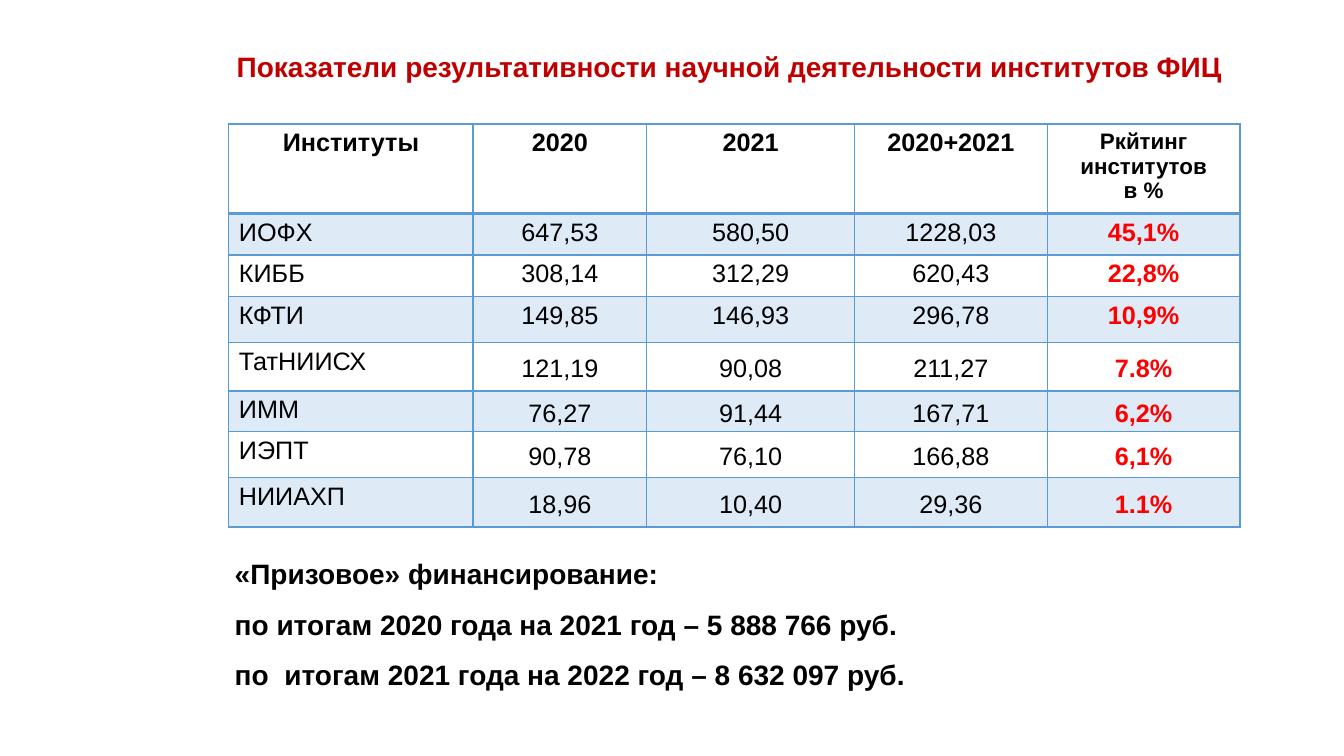
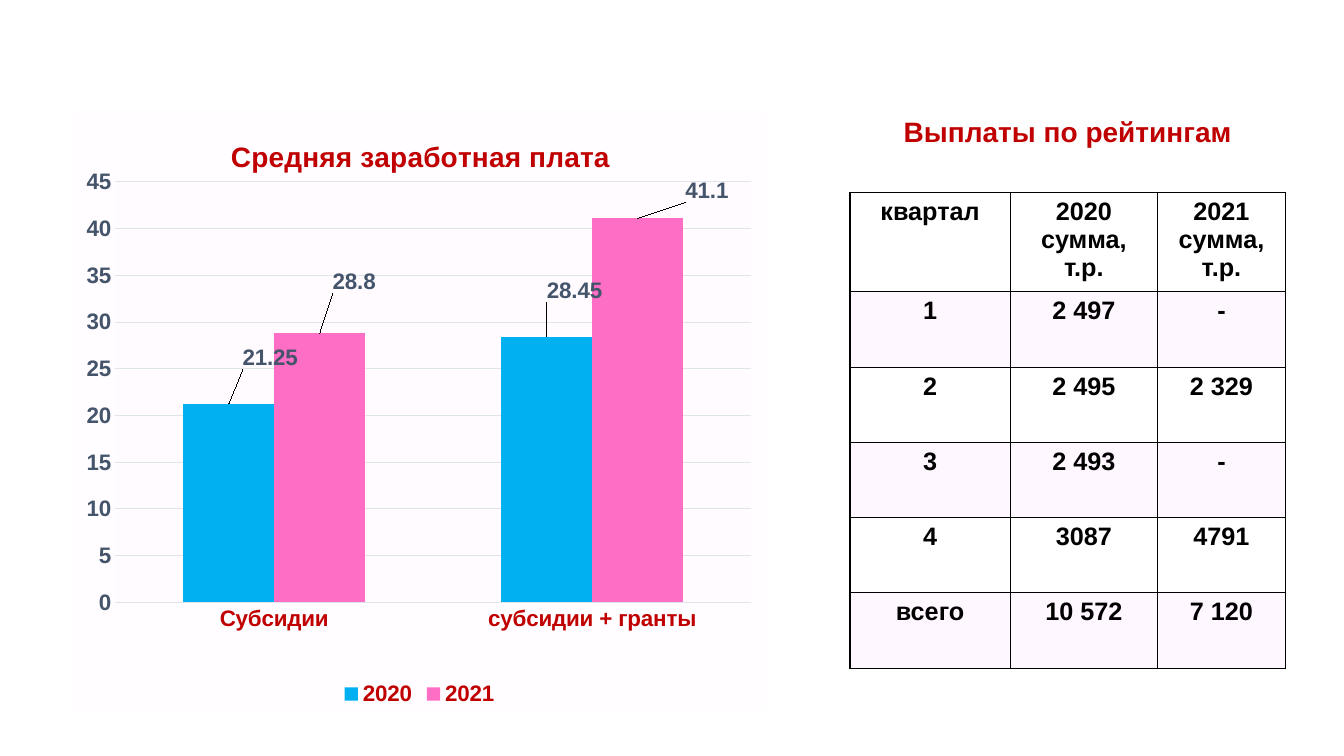
from lxml.etree import SubElement
from pptx import Presentation
from pptx.chart.data import CategoryChartData
from pptx.dml.color import RGBColor
from pptx.enum.chart import XL_CHART_TYPE, XL_LEGEND_POSITION, XL_TICK_MARK
from pptx.enum.text import MSO_ANCHOR, MSO_AUTO_SIZE, PP_ALIGN
from pptx.oxml import parse_xml
from pptx.oxml.ns import nsdecls, qn
from pptx.util import Inches, Pt

COLORS = {
    "title": "C00000",
    "text": "000000",
    "white": "FFFFFF",
    "rating": "FF0000",
    "grid_blue": "5B9BD5",
    "band_blue": "DEEBF7",
    "band_pink": "FFF7FF",
    "chart_back": "FFFDFF",
    "plot_back": "FFFBFF",
    "axis_text": "44546A",
    "axis_line": "E0E5EB",
    "year_2020": "00B0F0",
    "year_2021": "FE6EC4",
}
FONT = "Arial"
WIDTH, HEIGHT = Inches(13.33), Inches(7.5)


def rgb(name):
    return RGBColor.from_string(COLORS[name])


def box(left, top, width, height):
    return (int(WIDTH * left / 100), int(HEIGHT * top / 100),
            int(WIDTH * width / 100), int(HEIGHT * height / 100))


def style_font(font, size, color="text", bold=True):
    font.name = FONT
    font.size = Pt(size)
    font.bold = bold
    font.color.rgb = rgb(color)


def write(tf, lines, size, color="text", bold=True, align=PP_ALIGN.LEFT, spacing=None):
    for i, line in enumerate(lines):
        p = tf.paragraphs[0] if i == 0 else tf.add_paragraph()
        p.alignment = align
        if spacing:
            p.line_spacing = spacing
        r = p.add_run()
        r.text = line
        style_font(r.font, size, color, bold)


def new_slide(prs, title, area):
    s = prs.slides.add_slide(prs.slide_layouts[5])
    sp = s.shapes.title
    sp.left, sp.top, sp.width, sp.height = area
    tf = sp.text_frame
    tf.word_wrap = True
    tf.auto_size = MSO_AUTO_SIZE.NONE
    tf.vertical_anchor = MSO_ANCHOR.TOP
    write(tf, [title], 20, "title", align=PP_ALIGN.CENTER)
    return s


def set_borders(cell, color, top=1, bottom=1):
    tc_pr = cell._tc.get_or_add_tcPr()
    for i, (side, width) in enumerate(zip("LRTB", (1, 1, top, bottom))):
        ln = parse_xml(f'<a:ln{side} {nsdecls("a")} w="{Pt(width)}"/>')
        fill = SubElement(ln, qn("a:solidFill"))
        SubElement(fill, qn("a:srgbClr"), val=COLORS[color])
        tc_pr.insert(i, ln)


def add_grid(s, area, columns, rows, data, band, line, header_rule=1):
    left, top, width, height = area
    table = s.shapes.add_table(len(rows), len(columns), left, top, width, height).table
    table.first_row = table.horz_banding = False
    for column, share in zip(table.columns, columns):
        column.width = int(width * share / sum(columns))
    for row, share in zip(table.rows, rows):
        row.height = int(height * share / sum(rows))
    for i, values in enumerate(data):
        for j, value in enumerate(values):
            cell = table.cell(i, j)
            cell.fill.solid()
            cell.fill.fore_color.rgb = rgb(band if i % 2 else "white")
            set_borders(cell, line, header_rule if i == 1 else 1,
                        header_rule if i == 0 else 1)
            yield i, j, cell, value.split("\n")


def add_institutes(s, area):
    data = [
        ("Институты", "2020", "2021", "2020+2021", "Ркйтинг институтов\nв %"),
        ("ИОФХ", "647,53", "580,50", "1228,03", "45,1%"),
        ("КИББ", "308,14", "312,29", "620,43", "22,8%"),
        ("КФТИ", "149,85", "146,93", "296,78", "10,9%"),
        ("ТатНИИСХ", "121,19", "90,08", "211,27", "7.8%"),
        ("ИММ", "76,27", "91,44", "167,71", "6,2%"),
        ("ИЭПТ", "90,78", "76,10", "166,88", "6,1%"),
        ("НИИАХП", "18,96", "10,40", "29,36", "1.1%"),
    ]
    columns = (2.42, 1.72, 2.06, 1.91, 1.91)
    rows = (0.89, 0.41, 0.41, 0.46, 0.48, 0.4, 0.46, 0.49)
    for i, j, cell, lines in add_grid(s, area, columns, rows, data,
                                      "band_blue", "grid_blue", 2):
        header, rating, centred = i == 0, j == 4, i >= 4 and j > 0
        if centred:
            cell.vertical_anchor = MSO_ANCHOR.MIDDLE
            cell.margin_left = cell.margin_right = Inches(0.07)
            cell.margin_top = cell.margin_bottom = 0
        write(cell.text_frame, lines, 16 if header and rating else 18,
              "rating" if rating and not header else "text", header or rating,
              PP_ALIGN.CENTER if header or j else PP_ALIGN.LEFT,
              1.15 if centred else None)


def add_funding(s, area):
    tf = s.shapes.add_textbox(*area).text_frame
    tf.word_wrap = True
    write(tf, [
        "«Призовое» финансирование:",
        "по итогам 2020 года на 2021 год – 5 888 766 руб.",
        "по  итогам 2021 года на 2022 год – 8 632 097 руб.",
    ], 20, spacing=1.5)


def add_payments(s, area):
    data = [
        ("квартал", "2020\nсумма, т.р.", "2021\nсумма, т.р."),
        ("1", "2 497", "-"),
        ("2", "2 495", "2 329"),
        ("3", "2 493", "-"),
        ("4", "3087", "4791"),
        ("всего", "10 572", "7 120"),
    ]
    rows = (0.99,) + (0.75,) * 5
    for i, j, cell, lines in add_grid(s, area, (1.59, 1.46, 1.27), rows, data,
                                      "band_pink", "text"):
        write(cell.text_frame, lines, 18, align=PP_ALIGN.CENTER)


def manual_layout(**values):
    layout = parse_xml(f'<c:layout {nsdecls("c")}><c:manualLayout/></c:layout>')
    for name, value in values.items():
        SubElement(layout[0], qn(f"c:{name}"), val=str(value))
    return layout


def back_fill(color):
    return parse_xml(
        f'<c:spPr {nsdecls("c", "a")}><a:solidFill><a:srgbClr val="{COLORS[color]}"/>'
        '</a:solidFill><a:ln><a:noFill/></a:ln></c:spPr>')


def style_axes(chart):
    cat, val = chart.category_axis, chart.value_axis
    for axis, color in ((cat, "title"), (val, "axis_text")):
        axis.major_tick_mark = axis.minor_tick_mark = XL_TICK_MARK.NONE
        style_font(axis.tick_labels.font, 16, color)
    val.minimum_scale, val.maximum_scale, val.major_unit = 0, 45, 5
    val.format.line.fill.background()
    for line in (cat.format.line, val.major_gridlines.format.line):
        line.color.rgb = rgb("axis_line")
        line.width = Pt(0.75)


def style_series(series, color, shifts):
    series.format.fill.solid()
    series.format.fill.fore_color.rgb = rgb(color)
    series.invert_if_negative = False
    for i, (x, y) in enumerate(shifts):
        style_font(series.points[i].data_label.font, 16, "axis_text")
        label = series._element.xpath("c:dLbls/c:dLbl")[i]
        label.insert(1, manual_layout(x=x, y=y))


def add_salaries(s, area):
    data = CategoryChartData(number_format="General")
    data.categories = ["Субсидии", "субсидии + гранты"]
    data.add_series("2020", (21.25, 28.45))
    data.add_series("2021", (28.8, 41.1))
    chart = s.shapes.add_chart(XL_CHART_TYPE.COLUMN_CLUSTERED, *area, data).chart
    style_font(chart.font, 16)

    chart.has_title = True
    title = chart.chart_title
    write(title.text_frame, ["Средняя заработная плата"], 20, "title",
          align=PP_ALIGN.CENTER)
    for old in title._element.findall(qn("c:layout")):
        title._element.remove(old)
    title._element.find(qn("c:tx")).addnext(
        manual_layout(xMode="edge", yMode="edge", x=0.22, y=0.04))

    chart.has_legend = True
    chart.legend.position = XL_LEGEND_POSITION.BOTTOM
    chart.legend.include_in_layout = False
    style_font(chart.legend.font, 16, "title")

    style_axes(chart)
    plot = chart.plots[0]
    plot.gap_width, plot.overlap, plot.vary_by_categories = 150, 0, False
    style_series(plot.series[0], "year_2020", ((0.06, -0.05), (0.04, -0.05)))
    style_series(plot.series[1], "year_2021", ((0.05, -0.06), (0.1, -0.02)))

    space = chart._chartSpace
    plot_area = space.chart.plotArea
    for old in plot_area.findall(qn("c:layout")):
        plot_area.remove(old)
    plot_area.insert(0, manual_layout(layoutTarget="inner", xMode="edge", yMode="edge",
                                      x=0.06, y=0.12, w=0.92, h=0.7))
    plot_area.append(back_fill("plot_back"))
    space.chart.addnext(back_fill("chart_back"))


def main():
    prs = Presentation()
    prs.slide_width, prs.slide_height = WIDTH, HEIGHT

    s = new_slide(prs, "Показатели результативности научной деятельности институтов ФИЦ",
                  box(16.28, 5.87, 76, 5.87))
    add_institutes(s, box(17.03, 16.4, 75.24, 53.33))
    add_funding(s, box(16.73, 70.8, 63.24, 25.6))

    s = new_slide(prs, "Выплаты по рейтингам", box(63.24, 14.53, 32.41, 5.87))
    add_salaries(s, box(5.48, 14.53, 51.46, 79.47))
    add_payments(s, box(63.24, 25.47, 32.41, 62.93))

    prs.save("out.pptx")


if __name__ == "__main__":
    main()
